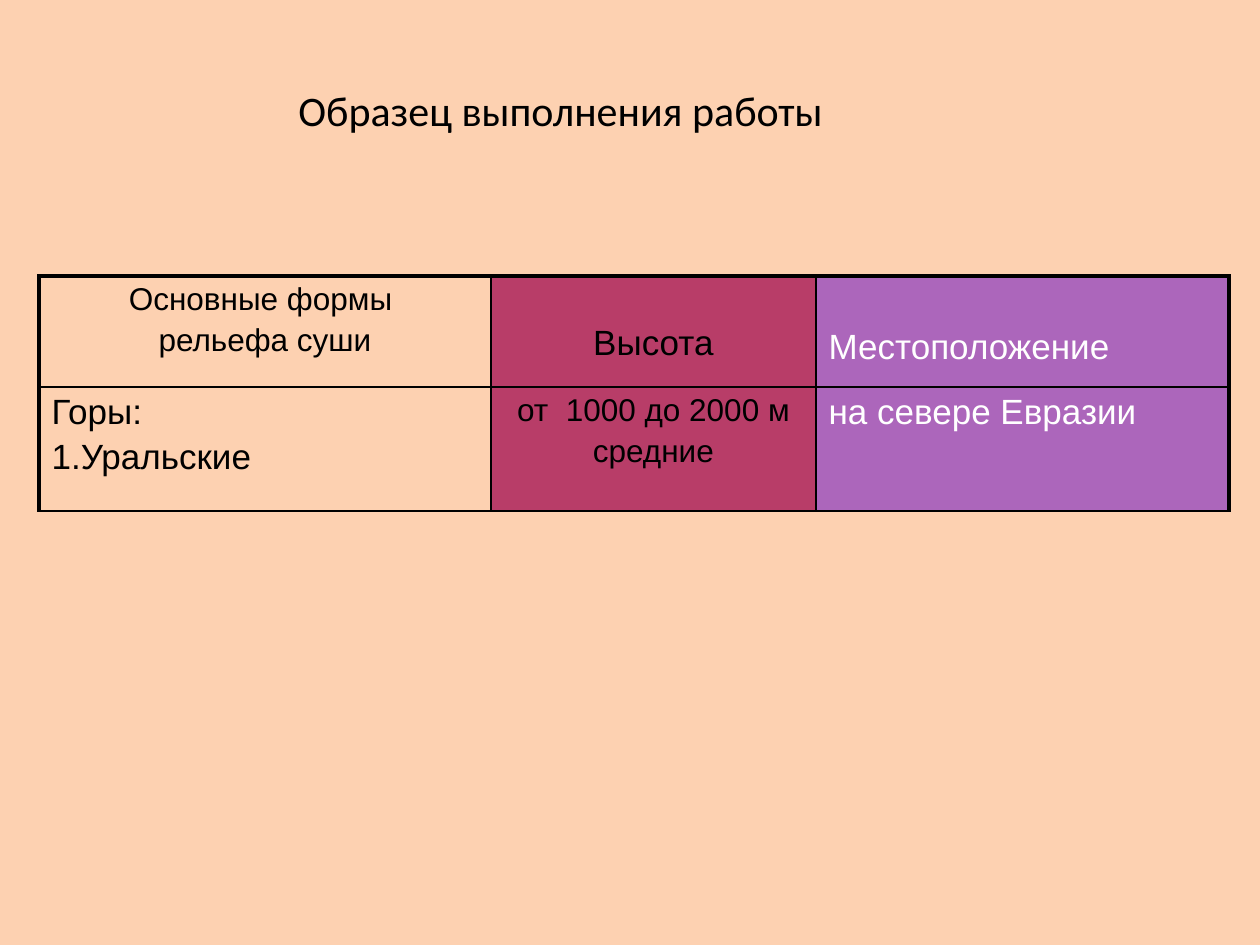
from lxml.etree import SubElement
from pptx import Presentation
from pptx.dml.color import RGBColor
from pptx.enum.text import PP_ALIGN
from pptx.oxml.ns import qn
from pptx.util import Emu, Pt

PX = 914400 // 126
COLORS = {
    "background": "FDD1B1",
    "height": "B83D68",
    "location": "AC66BB",
    "dark": "000000",
    "light": "FFFFFF",
}
COLUMNS = [
    {"width": 452, "fill": None, "font": "dark"},
    {"width": 325, "fill": "height", "font": "dark"},
    {"width": 413, "fill": "location", "font": "light"},
]
ROW_HEIGHTS = [111, 124]
CENTER, LEFT = PP_ALIGN.CENTER, PP_ALIGN.LEFT
CELLS = [
    [
        ("Основные формы \nрельефа суши", 18, CENTER, 6),
        ("Высота", 20, CENTER, 48),
        ("Местоположение", 20, LEFT, 52),
    ],
    [
        ("Горы:\n1.Уральские", 20, LEFT, 6),
        ("от  1000 до 2000 м\nсредние", 18, CENTER, 6),
        ("на севере Евразии", 20, LEFT, 6),
    ],
]


def px(length):
    return Emu(length * PX)


def color(name):
    return RGBColor.from_string(COLORS[name])


def format_text(text_frame, font_name, size, color_name, alignment=LEFT):
    for index, paragraph in enumerate(text_frame.paragraphs):
        paragraph.alignment = alignment
        if index:
            paragraph.space_before = Pt(3.5)
        for run in paragraph.runs:
            run.font.name = font_name
            run.font.size = Pt(size)
            run.font.color.rgb = color(color_name)


def add_border(cell, side, width):
    properties = cell._tc.get_or_add_tcPr()
    line = SubElement(properties, qn(f"a:ln{side}"), w=str(Pt(width)))
    fill = SubElement(line, qn("a:solidFill"))
    SubElement(fill, qn("a:srgbClr"), val=COLORS["dark"])


def fill_cell(cell, content, column, outer_sides):
    text, size, alignment, top_margin = content
    cell.text_frame.text = text
    cell.margin_top = px(top_margin)
    format_text(cell.text_frame, "Arial", size, column["font"], alignment)
    for side in "LRTB":
        add_border(cell, side, 2.25 if side in outer_sides else 1)
    if column["fill"]:
        cell.fill.solid()
        cell.fill.fore_color.rgb = color(column["fill"])
    else:
        cell.fill.background()


def add_relief_table(slide):
    width = sum(column["width"] for column in COLUMNS)
    frame = slide.shapes.add_table(
        len(ROW_HEIGHTS), len(COLUMNS), px(39), px(276), px(width), px(sum(ROW_HEIGHTS))
    )
    table = frame.table
    for index, column in enumerate(COLUMNS):
        table.columns[index].width = px(column["width"])
    for row, height in enumerate(ROW_HEIGHTS):
        table.rows[row].height = px(height)
        for index, column in enumerate(COLUMNS):
            outer_sides = {
                "T": row == 0,
                "L": index == 0,
                "R": index == len(COLUMNS) - 1,
            }
            thick = [side for side, outer in outer_sides.items() if outer]
            fill_cell(table.cell(row, index), CELLS[row][index], column, thick)


def add_title(slide):
    shape = slide.shapes.add_textbox(px(286), px(78), px(777), px(63))
    shape.text_frame.word_wrap = True
    shape.text_frame.text = "Образец выполнения работы"
    format_text(shape.text_frame, "Calibri", 24, "dark")


def main():
    """Build the slide with a sample table of relief forms."""
    presentation = Presentation()
    presentation.slide_width, presentation.slide_height = px(1260), px(945)
    slide = presentation.slides.add_slide(presentation.slide_layouts[6])
    slide.background.fill.solid()
    slide.background.fill.fore_color.rgb = color("background")
    add_relief_table(slide)
    add_title(slide)
    presentation.save("out.pptx")


if __name__ == "__main__":
    main()
